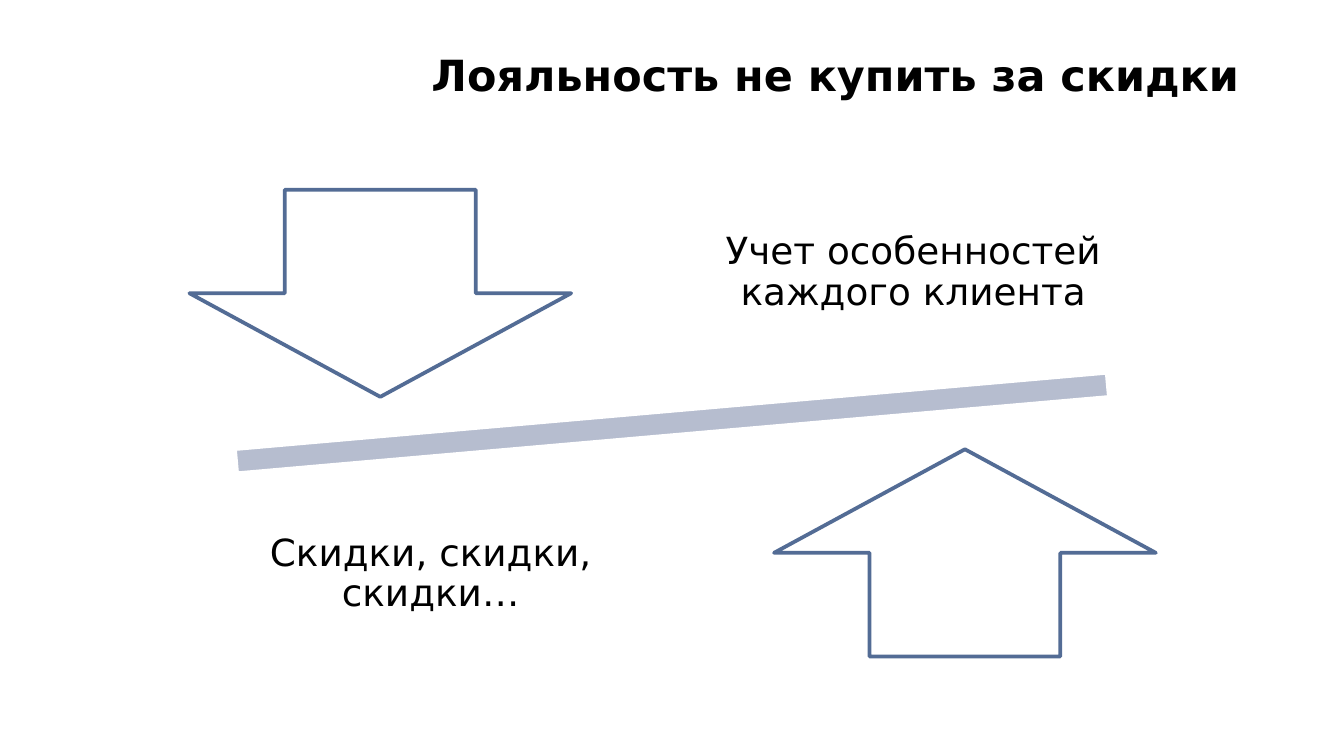
from pptx import Presentation
from pptx.dml.color import RGBColor
from pptx.enum.shapes import MSO_SHAPE
from pptx.enum.text import MSO_ANCHOR, MSO_AUTO_SIZE, PP_ALIGN
from pptx.util import Inches, Pt

WIDE = Inches(10)
HIGH = WIDE * 9 // 16
FONT = "DejaVu Sans"
BLACK = RGBColor(0x00, 0x00, 0x00)
WHITE = RGBColor(0xFF, 0xFF, 0xFF)
BLUE = RGBColor(0x53, 0x6C, 0x95)
GREY = RGBColor(0xB6, 0xBD, 0xCF)
MINUS, DOWN, UP = MSO_SHAPE.MATH_MINUS, MSO_SHAPE.DOWN_ARROW, MSO_SHAPE.UP_ARROW
LEFT, CENTER = PP_ALIGN.LEFT, PP_ALIGN.CENTER
MIDDLE, FIXED = MSO_ANCHOR.MIDDLE, MSO_AUTO_SIZE.NONE

# Sizes and places are percents of the slide's width and height
ARROW = (28.4, 27.4)
LABEL = (36.9, 28.8)


def area(left, top, width, height):
    return [round(share * full / 100) for share, full in
            zip((left, top, width, height), (WIDE, HIGH, WIDE, HIGH))]


def add_form(slide, kind, box, fill, line, turn=0):
    form = slide.shapes.add_shape(kind, *area(*box))
    form.shadow.inherit = False
    form.fill.solid()
    form.fill.fore_color.rgb = fill
    form.line.color.rgb = line
    form.line.width = Pt(2)
    form.rotation = turn


def write(frame, text, size, align, bold=False):
    frame.word_wrap = True
    frame.auto_size = FIXED
    frame.vertical_anchor = MIDDLE
    frame.text = text
    par = frame.paragraphs[0]
    par.alignment = align
    font = par.font
    font.name, font.size, font.bold = FONT, Pt(size), bold
    font.color.rgb = BLACK
    return par


def add_label(slide, text, left, top):
    frame = slide.shapes.add_textbox(*area(left, top, *LABEL)).text_frame
    frame.margin_left = frame.margin_right = Inches(0.16)
    frame.margin_top = frame.margin_bottom = Inches(0.16)
    par = write(frame, text, 20, CENTER)
    par.line_spacing = 0.9
    par.space_after = Pt(7)


def set_title(slide, text):
    title = slide.shapes.title
    title.left, title.top, title.width, title.height = area(31.1, 5.16, 66.4, 9.42)
    write(title.text_frame, text, 23, LEFT, bold=True)


def main():
    deck = Presentation()
    deck.slide_width, deck.slide_height = WIDE, HIGH
    slide = deck.slides.add_slide(deck.slide_layouts[5])
    set_title(slide, "Лояльность не купить за скидки")
    add_form(slide, MINUS, (5.7, 49.11, 88.6, 13.7), GREY, WHITE, turn=355)
    add_form(slide, DOWN, (14.1, 25.09, *ARROW), WHITE, BLUE)
    add_label(slide, "Учет особенностей каждого клиента", 49.5, 21.71)
    add_form(slide, UP, (57.6, 59.43, *ARROW), WHITE, BLUE)
    add_label(slide, "Скидки, скидки, скидки…", 13.6, 61.55)
    deck.save("out.pptx")


if __name__ == "__main__":
    main()
